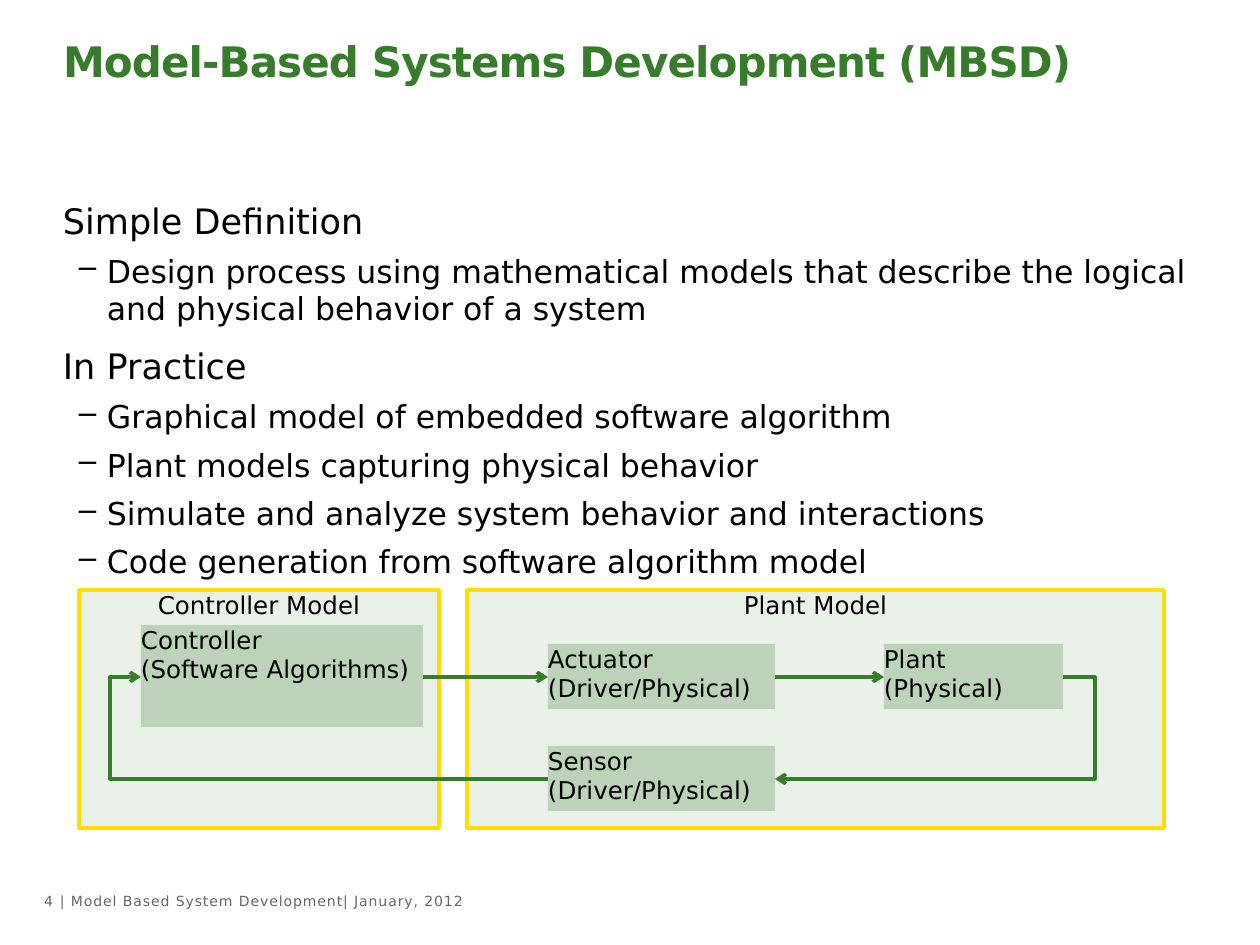
from lxml.etree import SubElement as Sub
from pptx import Presentation
from pptx.dml.color import RGBColor
from pptx.enum.shapes import MSO_CONNECTOR as Conn, MSO_SHAPE as Kind
from pptx.enum.text import MSO_ANCHOR as Anchor, MSO_AUTO_SIZE as Auto, PP_ALIGN as Align
from pptx.oxml.ns import qn
from pptx.util import Pt

GREEN, GOLD, GREY, BLACK = "367C2B", "FFDE00", "666666", "000000"


def px(n):
    return round(n * 914400 / 126)


def rgb(code):
    return RGBColor.from_string(code)


def write(frame, text, size=14, color=BLACK, bold=False, align=Align.LEFT,
          anchor=Anchor.TOP, wrap=True, track=0, lead=None):
    """Fill a frame, one paragraph a line; a line led by '–' is a bullet."""
    frame.margin_left = frame.margin_right = 0
    frame.margin_top = frame.margin_bottom = 0
    frame.auto_size = Auto.NONE
    frame.word_wrap = wrap
    frame.vertical_anchor = anchor
    for i, line in enumerate(text.split("\n")):
        para = frame.paragraphs[0] if i == 0 else frame.add_paragraph()
        sub = line.startswith("–")
        if sub:
            para.level = 1
            props = para._p.get_or_add_pPr()
            props.set("marL", str(px(44)))
            props.set("indent", str(px(-28)))
            Sub(props, qn("a:buChar")).set("char", "–")
            line = line[1:]
        para.alignment = align
        if lead:
            para.line_spacing = Pt(lead)
        run = para.add_run()
        run.text = line
        font = run.font
        font.name = "DejaVu Sans"
        font.size = Pt(size - 2 if sub else size)
        font.bold = bold
        font.color.rgb = rgb(color)
        if track:
            run._r.get_or_add_rPr().set("spc", str(track))


class Deck:
    def __init__(self):
        self.prs = Presentation()
        self.prs.slide_width, self.prs.slide_height = px(1260), px(945)
        self.slide = self.prs.slides.add_slide(self.prs.slide_layouts[5])
        self.shapes = self.slide.shapes

    def title(self, text, x, y, w, h):
        head = self.shapes.title
        head.left, head.top, head.width, head.height = map(px, (x, y, w, h))
        write(head.text_frame, text, size=24, color=GREEN, bold=True,
              track=-50, lead=26)

    def text(self, text, x, y, w, h, **form):
        box = self.shapes.add_textbox(*map(px, (x, y, w, h)))
        write(box.text_frame, text, **form)
        return box.text_frame

    def rect(self, text, x, y, w, h, alpha, edge=None, **form):
        box = self.shapes.add_shape(Kind.RECTANGLE, *map(px, (x, y, w, h)))
        box.shadow.inherit = False
        box.fill.solid()
        box.fill.fore_color.rgb = rgb(GREEN)
        tint = box.fill._xPr.find(qn("a:solidFill"))[0]
        Sub(tint, qn("a:alpha")).set("val", str(alpha * 1000))
        if edge:
            box.line.color.rgb = rgb(edge)
            box.line.width = Pt(2)
        else:
            box.line.fill.background()
        write(box.text_frame, text, **form)

    def arrow(self, x1, y1, x2, y2, via=None):
        """Straight arrow, or one bent at the column x = via."""
        kind = Conn.STRAIGHT if via is None else Conn.ELBOW
        link = self.shapes.add_connector(kind, *map(px, (x1, y1, x2, y2)))
        link.line.color.rgb = rgb(GREEN)
        link.line.width = Pt(2)
        props = link._element.spPr
        Sub(props.find(qn("a:ln")), qn("a:tailEnd")).set("type", "arrow")
        Sub(props, qn("a:effectLst"))
        if via is not None:
            bend = round((via - x1) / (x2 - x1) * 100000)
            guide = Sub(props.find(qn("a:prstGeom")).find(qn("a:avLst")), qn("a:gd"))
            guide.set("name", "adj1")
            guide.set("fmla", f"val {bend}")


def main():
    deck = Deck()

    # Footer
    foot = dict(size=8, color=GREY, anchor=Anchor.MIDDLE, track=50)
    deck.text("| Model Based System Development| January, 2012", 60, 882, 693, 38, **foot)
    deck.text("4", 6, 882, 47, 38, align=Align.RIGHT, **foot)

    # Title and body
    deck.title("Model-Based Systems Development (MBSD)", 63, 40, 1134, 90)
    body = deck.text(
        "Simple Definition\n"
        "–Design process using mathematical models that describe the logical"
        " and physical behavior of a system\n"
        "In Practice\n"
        "–Graphical model of embedded software algorithm\n"
        "–Plant models capturing physical behavior\n"
        "–Simulate and analyze system behavior and interactions\n"
        "–Code generation from software algorithm model",
        63, 199, 1134, 624, size=20)
    for para in body.paragraphs[1:]:
        para.space_before = Pt(6 if para.level else 10)

    # Model frames
    for name, x, w in (("Plant Model", 467, 697), ("Controller Model", 79, 360)):
        deck.rect(name, x, 590, w, 238, 10, edge=GOLD, align=Align.CENTER)

    # Blocks
    for name, x, y, w, h in (
            ("Controller\n(Software Algorithms)", 141, 625, 282, 102),
            ("Actuator\n(Driver/Physical)", 548, 644, 227, 65),
            ("Plant\n(Physical)", 884, 644, 179, 65),
            ("Sensor\n(Driver/Physical)", 548, 746, 227, 65)):
        deck.rect(name, x, y, w, h, 25, wrap=False)

    # Signal loop
    top, low = 677, 779
    deck.arrow(423, top, 548, top)
    deck.arrow(775, top, 884, top)
    deck.arrow(1063, top, 775, low, via=1095)
    deck.arrow(548, low, 141, top, via=110)

    deck.prs.save("out.pptx")


if __name__ == "__main__":
    main()
